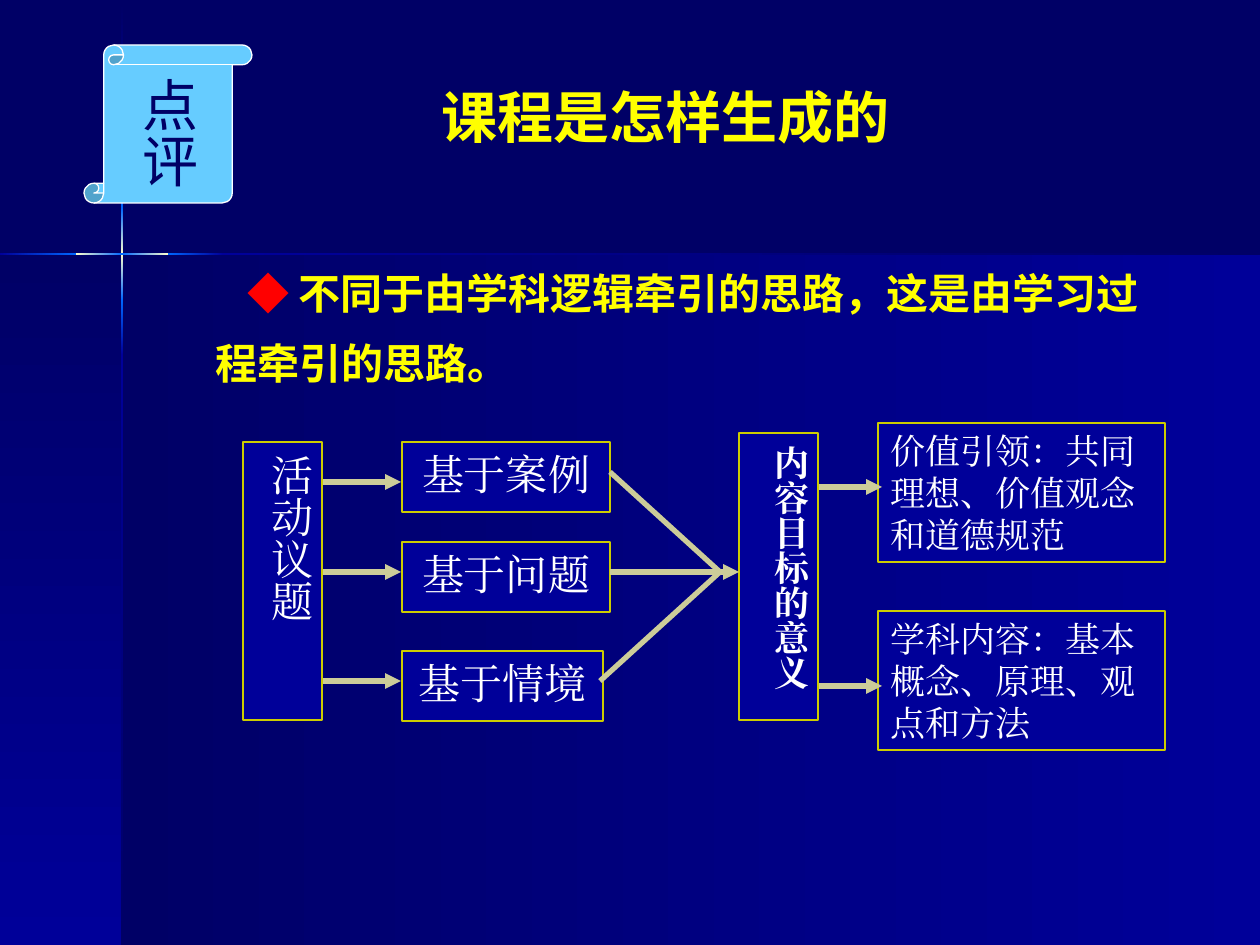
from dataclasses import dataclass

from lxml import etree
from pptx import Presentation
from pptx.dml.color import RGBColor
from pptx.enum.shapes import MSO_CONNECTOR as Link, MSO_SHAPE as Preset
from pptx.enum.text import MSO_ANCHOR as Anchor, PP_ALIGN as Align
from pptx.oxml.ns import qn
from pptx.util import Emu, Pt

PX = 914400 / 126


@dataclass(frozen=True)
class Theme:
    night: str = "000066"
    navy: str = "000099"
    glow: str = "0066FF"
    cream: str = "FFFFCC"
    gold: str = "CCCC00"
    sand: str = "CCCC99"
    sky: str = "66CCFF"
    white: str = "FFFFFF"
    yellow: str = "FFFF00"
    red: str = "FF0000"
    serif: str = "Times New Roman"
    sans: str = "Arial"
    badge: str = "Cabin"
    cjk: str = "Noto Sans CJK SC"
    title: int = 32
    body: int = 24
    small: int = 20


theme = Theme()


def px(*lengths):
    return [Emu(round(length * PX)) for length in lengths]


def add_span(para, text, size, font, color, bold=False):
    """Add one run, using the same font for Latin and East Asian text."""
    span = para.add_run()
    span.text = text
    span.font.size = Pt(size)
    span.font.name = font
    span.font.bold = bold
    span.font.color.rgb = RGBColor.from_string(color)
    etree.SubElement(span._r.get_or_add_rPr(), qn("a:ea"), typeface=font)


deck = Presentation()
deck.slide_width, deck.slide_height = px(1260, 945)
page = deck.slides.add_slide(deck.slide_layouts[6])
page.background.fill.solid()
page.background.fill.fore_color.rgb = RGBColor.from_string(theme.night)

# Backdrop panels and the glowing cross: place, gradient angle, evenly spaced colours
fade_in = (theme.navy, theme.glow)
fade_out = (theme.glow, theme.navy)
dusk = (theme.night, theme.navy)
dawn = (theme.navy, theme.night)
backdrop = [
    ((122, 255, 1138, 690), 0, dusk),
    ((0, 255, 122, 690), 90, dusk),
    ((121, 1, 2, 151), 90, dusk),
    ((121, 355, 2, 590), 90, dawn),
    ((223, 253, 1037, 2), 0, dawn),
    ((121, 300, 2, 55), 90, fade_out),
    ((121, 152, 2, 56), 90, fade_in),
    ((121, 208, 2, 92), 90, (theme.glow, theme.cream, theme.glow)),
    ((0, 253, 76, 2), 0, fade_in),
    ((168, 253, 55, 2), 0, fade_out),
    ((76, 253, 92, 2), 0, (theme.cream, theme.glow, theme.cream)),
]
for place, angle, colors in backdrop:
    panel = page.shapes.add_shape(Preset.RECTANGLE, *px(*place))
    panel.shadow.inherit = False
    panel.line.fill.background()
    panel.fill.gradient()
    panel.fill.gradient_angle = -angle % 360
    stops = panel._element.spPr.find(qn("a:gradFill")).find(qn("a:gsLst"))
    for stop in list(stops):
        stops.remove(stop)
    for index, color in enumerate(colors):
        position = str(100000 * index // (len(colors) - 1))
        stop = etree.SubElement(stops, qn("a:gs"), pos=position)
        etree.SubElement(stop, qn("a:srgbClr"), val=color)

# Diagram boxes: text, place, size, alignment, vertical, bold
boxes = [
    ("活动议题", (243, 442, 79, 278), theme.body, Align.LEFT, True, False),
    ("基于案例", (402, 442, 208, 70), theme.body, Align.CENTER, False, False),
    ("基于问题", (402, 542, 208, 70), theme.body, Align.CENTER, False, False),
    ("基于情境", (402, 651, 201, 70), theme.body, Align.CENTER, False, False),
    ("内容目标的意义", (739, 433, 79, 287), theme.small, Align.LEFT, True, True),
    ("价值引领：共同理想、价值观念和道德规范", (878, 423, 287, 139),
     theme.small, Align.LEFT, False, False),
    ("学科内容：基本概念、原理、观点和方法", (878, 611, 287, 139),
     theme.small, Align.LEFT, False, False),
]
for text, place, size, align, vertical, bold in boxes:
    box = page.shapes.add_shape(Preset.RECTANGLE, *px(*place))
    box.shadow.inherit = False
    box.fill.solid()
    box.fill.fore_color.rgb = RGBColor.from_string(theme.navy)
    box.line.color.rgb = RGBColor.from_string(theme.gold)
    box.line.width = Pt(0.75)
    frame = box.text_frame
    frame.word_wrap = True
    frame.vertical_anchor = Anchor.TOP
    if vertical:
        frame._txBody.bodyPr.set("vert", "eaVert")
    para = frame.paragraphs[0]
    para.alignment = align
    add_span(para, text, size, theme.serif, theme.white, bold)

# Links: start, end, arrowhead
links = [((323, y), (401, y), True) for y in (482, 572, 681)]
links += [
    ((610, 572), (739, 572), True),
    ((610, 472), (720, 572), False),
    ((600, 681), (720, 572), False),
]
links += [((819, y), (882, y), True) for y in (487, 686)]
for start, end, has_head in links:
    link = page.shapes.add_connector(Link.STRAIGHT, *px(*start, *end))
    link.line.color.rgb = RGBColor.from_string(theme.sand)
    link.line.width = Pt(3)
    if has_head:
        etree.SubElement(link.line._get_or_add_ln(), qn("a:tailEnd"), type="triangle")
    etree.SubElement(link._element.spPr, qn("a:effectLst"))

statement = page.shapes.add_textbox(*px(203, 241, 962, 246))
statement.text_frame.word_wrap = True
para = statement.text_frame.paragraphs[0]
para.line_spacing = 1.4
para._p.get_or_add_pPr().set("indent", str(px(32)[0]))
add_span(para, "◆ ", theme.body, theme.cjk, theme.red, True)
add_span(para, "不同于由学科逻辑牵引的思路，这是由学习过程牵引的思路。",
         theme.body, theme.cjk, theme.yellow, True)

scroll = page.shapes.add_shape(Preset.VERTICAL_SCROLL, *px(84, 45, 168, 158))
scroll.shadow.inherit = False
scroll.fill.solid()
scroll.fill.fore_color.rgb = RGBColor.from_string(theme.sky)
scroll.line.color.rgb = RGBColor.from_string(theme.white)
scroll.line.width = Pt(0.75)
scroll.text_frame.word_wrap = False
scroll.text_frame.vertical_anchor = Anchor.MIDDLE
scroll.text_frame._txBody.bodyPr.set("vert", "eaVert")
para = scroll.text_frame.paragraphs[0]
para.alignment = Align.CENTER
add_span(para, "点评", theme.title, theme.badge, theme.night)

heading = page.shapes.add_textbox(*px(353, 76, 625, 81))
heading.text_frame.word_wrap = True
para = heading.text_frame.paragraphs[0]
para.alignment = Align.CENTER
add_span(para, "课程是怎样生成的", theme.title, theme.sans, theme.yellow, True)

deck.save("out.pptx")
